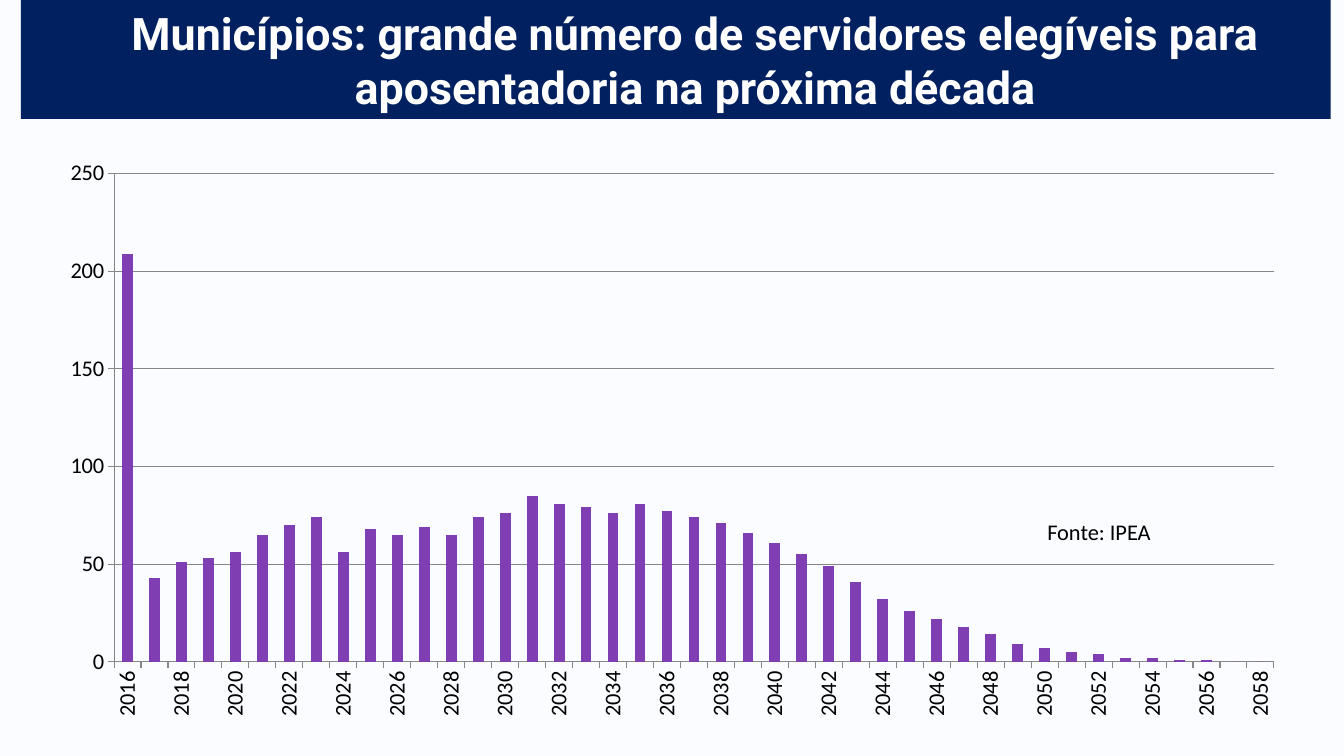
import pptx
import pptx.chart.data
import pptx.dml.color
import pptx.enum.chart
import pptx.enum.shapes
import pptx.enum.text
import pptx.oxml
import pptx.util

Pt = pptx.util.Pt
ALIGN = pptx.enum.text.PP_ALIGN


def color(value):
    return pptx.dml.color.RGBColor.from_string(value)


def write_text(shape, text, *, size, font, fill, align, bold=False):
    frame = shape.text_frame
    frame.word_wrap = True
    paragraph = frame.paragraphs[0]
    paragraph.alignment = align
    run = paragraph.add_run()
    run.text = text
    run.font.size = Pt(size)
    run.font.name = font
    run.font.bold = bold
    run.font.color.rgb = color(fill)
    return paragraph


presentation = pptx.Presentation()
presentation.slide_width = Pt(960)
presentation.slide_height = Pt(540)
slide = presentation.slides.add_slide(presentation.slide_layouts[6])
slide.background.fill.solid()
slide.background.fill.fore_color.rgb = color("FAFCFF")

title = slide.shapes.add_shape(
    pptx.enum.shapes.MSO_SHAPE.RECTANGLE, Pt(15), Pt(0), Pt(935.5), Pt(85)
)
title.shadow.inherit = False
title.fill.solid()
title.fill.fore_color.rgb = color("002060")
title.line.fill.background()
title.text_frame.vertical_anchor = pptx.enum.text.MSO_ANCHOR.MIDDLE
title_paragraph = write_text(
    title,
    "Municípios: grande número de servidores elegíveis para aposentadoria na próxima década",
    size=32, font="Roboto", fill="FFFFFF", align=ALIGN.CENTER, bold=True,
)
title_paragraph._p.get_or_add_pPr().set("marL", str(Pt(28)))

eligible = [
    209, 43, 51, 53, 56, 65, 70, 74, 56, 68, 65, 69, 65, 74, 76,
    85, 81, 79, 76, 81, 77, 74, 71, 66, 61, 55, 49, 41, 32, 26,
    22, 18, 14, 9, 7, 5, 4, 2, 2, 1, 1, 0, 0,
]
chart_data = pptx.chart.data.CategoryChartData()
chart_data.categories = [str(2016 + index) for index in range(len(eligible))]
chart_data.add_series("Servidores", eligible)
chart = slide.shapes.add_chart(
    pptx.enum.chart.XL_CHART_TYPE.COLUMN_CLUSTERED,
    Pt(32.5), Pt(106), Pt(895.5), Pt(414), chart_data,
).chart
chart.has_legend = False
chart.has_title = False
chart.font.name = "Calibri"
chart.font.size = Pt(16)
chart.font.color.rgb = color("000000")

plot = chart.plots[0]
plot.gap_width = 150
plot.vary_by_categories = False
plot.series[0].format.fill.solid()
plot.series[0].format.fill.fore_color.rgb = color("7F3EB2")

years = chart.category_axis
counts = chart.value_axis
counts.minimum_scale = 0
counts.maximum_scale = 250
counts.major_unit = 50
counts.has_major_gridlines = True
for line in (years.format.line, counts.format.line, counts.major_gridlines.format.line):
    line.color.rgb = color("868686")
    line.width = Pt(0.75)
for axis in (years, counts):
    axis.major_tick_mark = pptx.enum.chart.XL_TICK_MARK.OUTSIDE
    axis.tick_labels.font.size = Pt(16)

label_body = years._element.txPr.bodyPr
label_body.set("rot", "-5400000")
label_body.set("vert", "horz")
label_skip = pptx.oxml.parse_xml(
    '<c:tickLblSkip xmlns:c="http://schemas.openxmlformats.org/drawingml/2006/chart" val="2"/>'
)
years._element.find(pptx.oxml.ns.qn("c:lblOffset")).addnext(label_skip)

source = slide.shapes.add_textbox(Pt(741), Pt(366.5), Pt(200), Pt(26.5))
write_text(
    source, "Fonte: IPEA", size=16, font="Calibri", fill="000000", align=ALIGN.JUSTIFY
)

presentation.save("out.pptx")
